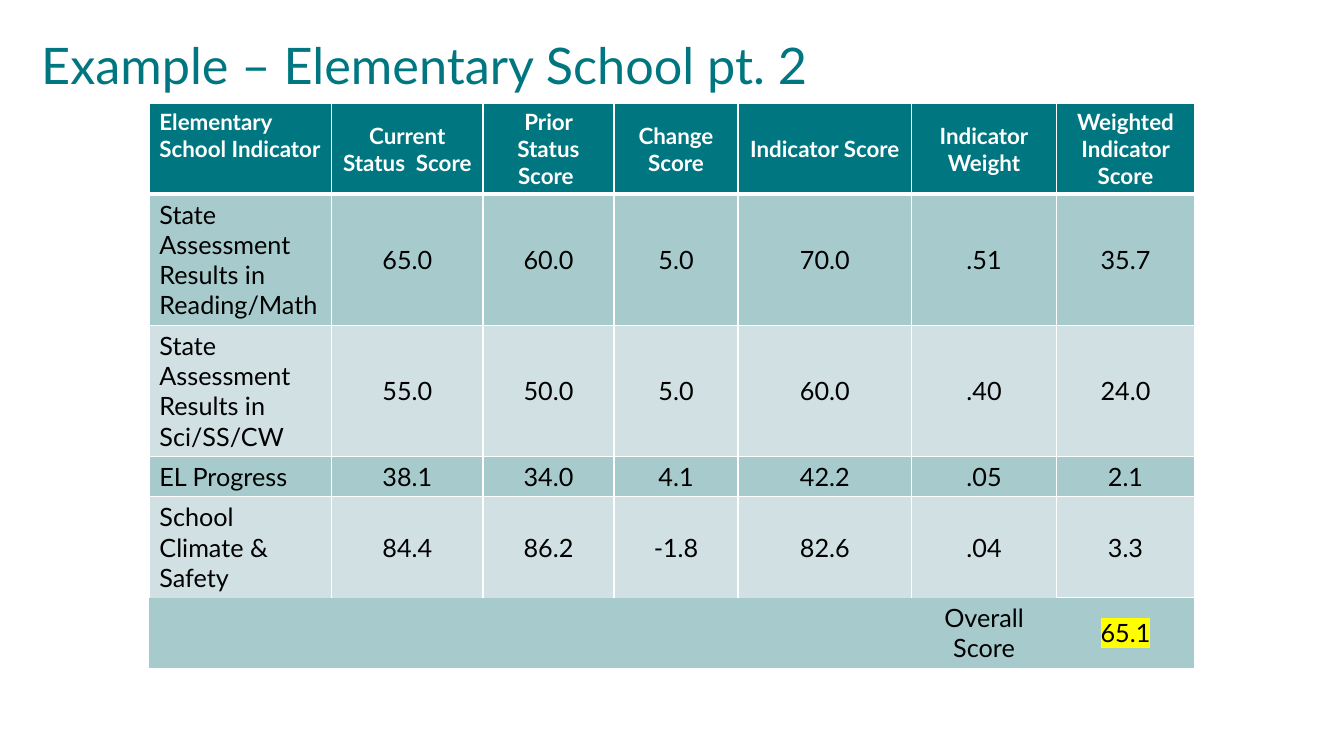
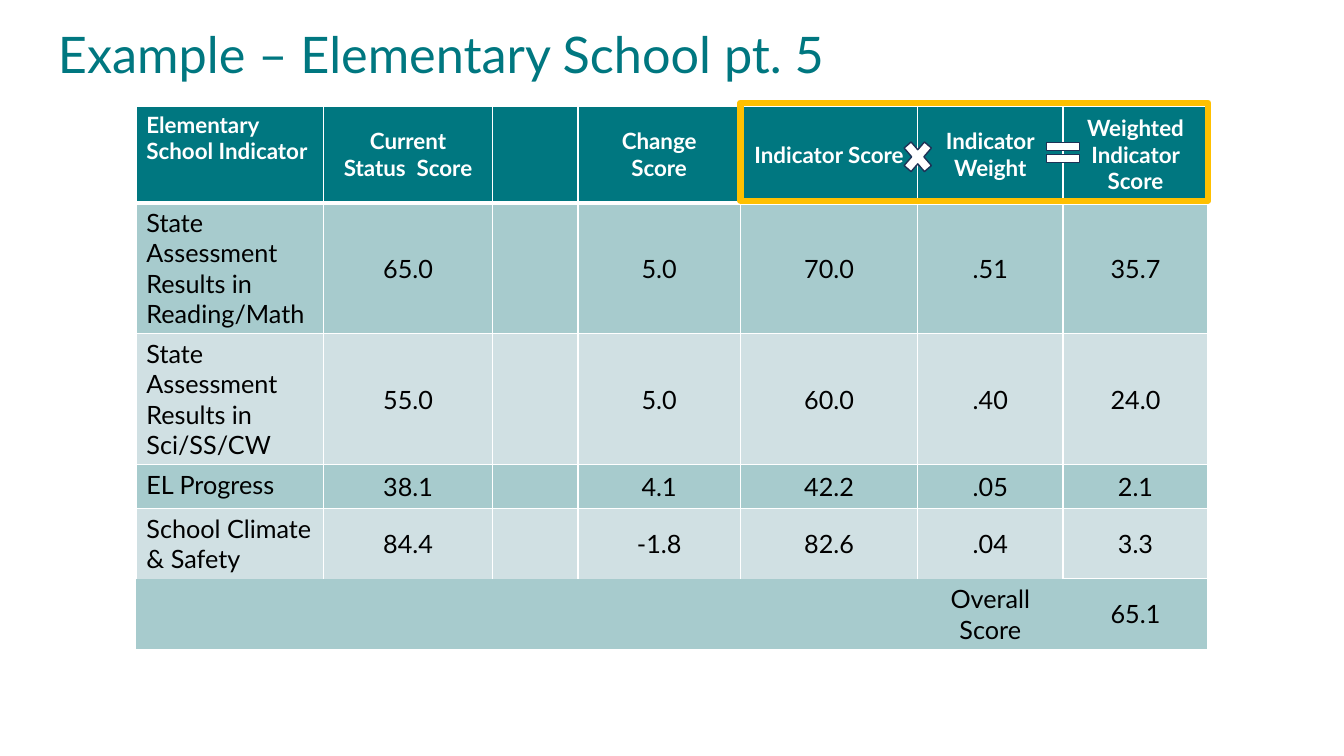
from dataclasses import dataclass
from itertools import accumulate

from lxml.etree import SubElement
from pptx import Presentation
from pptx.dml.color import RGBColor
from pptx.enum.shapes import MSO_SHAPE as Shape
from pptx.enum.text import MSO_ANCHOR as Anchor, MSO_AUTO_SIZE as AutoSize, PP_ALIGN as Align
from pptx.oxml.ns import qn
from pptx.util import Pt


@dataclass(frozen=True)
class Theme:
    font: str = "Lato"
    teal: str = "007780"
    dark_band: str = "A7CBCD"
    light_band: str = "D0E0E3"
    white: str = "FFFFFF"
    black: str = "000000"
    navy: str = "1E3256"
    amber: str = "FFC000"
    yellow: str = "FFFF00"
    title_size: float = 36
    header_size: float = 16
    body_size: float = 18
    thin: float = 1
    thick: float = 3
    frame: float = 4.5


THEME = Theme()

HEADERS = [
    "Elementary School Indicator",
    "Current\nStatus  Score",
    "Prior Status Score ",
    "Change\nScore",
    "Indicator Score",
    "Indicator\nWeight",
    "Weighted Indicator Score",
]
INDICATORS = [
    ["State Assessment Results in Reading/Math", "65.0", "60.0", "5.0", "70.0", ".51", "35.7"],
    ["State Assessment Results in Sci/SS/CW", "55.0", "50.0", "5.0", "60.0", ".40", "24.0"],
    ["EL Progress", "38.1", "34.0", "4.1", "42.2", ".05", "2.1"],
    ["School Climate & Safety", "84.4", "86.2", "-1.8", "82.6", ".04", "3.3"],
]
OVERALL = ["", "", "", "", "", "Overall Score", "65.1"]
ROWS = [HEADERS, *INDICATORS, OVERALL]
PRIOR, LAST_COLUMN, LAST_ROW = 2, len(HEADERS) - 1, len(ROWS) - 1


def color(value):
    return RGBColor.from_string(value)


def write_text(frame, text, *, size, fill, bold=False, align=Align.LEFT, spacing=None, highlight=None):
    for index, line in enumerate(text.split("\n")):
        paragraph = frame.add_paragraph() if index else frame.paragraphs[0]
        paragraph.alignment = align
        if spacing:
            paragraph.line_spacing = spacing
        run = paragraph.add_run()
        run.text = line
        font = run.font
        font.size, font.bold, font.name = Pt(size), bold, THEME.font
        font.color.rgb = color(fill)
        if highlight:
            properties = run._r.get_or_add_rPr()
            mark = SubElement(properties, qn("a:highlight"))
            SubElement(mark, qn("a:srgbClr"), val=highlight)
            properties.find(qn("a:solidFill")).addnext(mark)


def add_titled_slide(presentation, text, left, top):
    slide = presentation.slides.add_slide(presentation.slide_layouts[5])
    title = slide.shapes.title
    title.left, title.top, title.width, title.height = Pt(left), Pt(top), Pt(677), Pt(104)
    frame = title.text_frame
    frame.word_wrap, frame.auto_size = True, AutoSize.NONE
    frame.vertical_anchor = Anchor.MIDDLE
    frame.margin_left = frame.margin_right = Pt(5.4)
    frame.margin_top = frame.margin_bottom = Pt(2.7)
    write_text(frame, text, size=THEME.title_size, fill=THEME.teal, spacing=0.9)
    return slide


def set_borders(cell, **widths):
    properties = cell._tc.get_or_add_tcPr()
    for side in "LRTB":
        width = widths[side]
        line = SubElement(properties, qn(f"a:ln{side}"), w=str(Pt(width)))
        if width:
            fill = SubElement(line, qn("a:solidFill"))
            SubElement(fill, qn("a:srgbClr"), val=THEME.white)
        else:
            SubElement(line, qn("a:noFill"))


def border_widths(row, column):
    widths = dict.fromkeys("LRTB", THEME.thin)
    if row == 0:
        widths["B"] = THEME.thick
    elif row == 1:
        widths["T"] = THEME.thick
    elif row == LAST_ROW:
        if column == LAST_COLUMN:
            widths["L"] = 0
        else:
            widths = dict.fromkeys("LRTB", 0)
    elif row == LAST_ROW - 1 and column < LAST_COLUMN:
        widths["B"] = 0
    return widths


def format_cell(cell, text, row, column, highlight):
    header = row == 0
    set_borders(cell, **border_widths(row, column))
    cell.fill.solid()
    band = THEME.dark_band if row % 2 else THEME.light_band
    cell.fill.fore_color.rgb = color(THEME.teal if header else band)
    top_aligned = column == 0 or text == "Overall Score"
    cell.vertical_anchor = Anchor.TOP if top_aligned else Anchor.MIDDLE
    if text:
        write_text(
            cell.text_frame,
            text,
            size=THEME.header_size if header else THEME.body_size,
            fill=THEME.white if header else THEME.black,
            bold=header,
            align=Align.CENTER if column else Align.LEFT,
            highlight=highlight,
        )


def add_score_table(slide, left, top, widths, heights, *, blank_column=None, total_highlight=None):
    graphic = slide.shapes.add_table(
        len(ROWS), len(HEADERS), Pt(left), Pt(top), Pt(sum(widths)), Pt(sum(heights))
    )
    table = graphic.table
    table.first_row = table.horz_banding = False
    for column, width in zip(table.columns, widths):
        column.width = Pt(width)
    for table_row, height in zip(table.rows, heights):
        table_row.height = Pt(height)
    for row, texts in enumerate(ROWS):
        for column, text in enumerate(texts):
            is_total = (row, column) == (LAST_ROW, LAST_COLUMN)
            format_cell(
                table.cell(row, column),
                "" if column == blank_column else text,
                row,
                column,
                total_highlight if is_total else None,
            )


def add_outlined_shape(slide, kind, left, top, width, height, *, line, weight, fill=None):
    shape = slide.shapes.add_shape(kind, Pt(left), Pt(top), Pt(width), Pt(height))
    shape.shadow.inherit = False
    if fill:
        shape.fill.solid()
        shape.fill.fore_color.rgb = color(fill)
    else:
        shape.fill.background()
    shape.line.color.rgb = color(line)
    shape.line.width = Pt(weight)


def add_operator(slide, kind, center_x, center_y, width, height):
    add_outlined_shape(
        slide, kind, center_x - width / 2, center_y - height / 2, width, height,
        line=THEME.navy, weight=THEME.thin, fill=THEME.white,
    )


def add_scores_slide(presentation):
    slide = add_titled_slide(presentation, "Example – Elementary School pt. 2", 24, -3)
    widths = [130.3, 108, 93.6, 88.6, 124, 103.5, 98.6]
    heights = [64.8, 93.6, 93.6, 28.8, 72, 50.4]
    add_score_table(slide, 106.7, 74, widths, heights, total_highlight=THEME.yellow)


def add_weighting_slide(presentation):
    slide = add_titled_slide(presentation, "Example – Elementary School pt. 5", 36, -11)
    left, top = 97.4, 75.8
    widths = [133.9, 120.4, 61.2, 116, 126.7, 103.7, 103.7]
    heights = [69, 93.6, 93.6, 31, 50.4, 50.4]
    add_score_table(slide, left, top, widths, heights, blank_column=PRIOR)
    edges = list(accumulate(widths, initial=left))
    score_left, weight_left, weighted_left, table_right = edges[4:]
    add_operator(slide, Shape.MATH_EQUAL, weighted_left, 109, 32.4, 24)
    add_outlined_shape(
        slide, Shape.RECTANGLE, score_left, 73.4, table_right - score_left, 70,
        line=THEME.amber, weight=THEME.frame,
    )
    add_operator(slide, Shape.MATH_MULTIPLY, weight_left, 112, 28, 32.4)


def main():
    presentation = Presentation()
    presentation.slide_width, presentation.slide_height = Pt(960), Pt(540)
    add_scores_slide(presentation)
    add_weighting_slide(presentation)
    presentation.save("out.pptx")


if __name__ == "__main__":
    main()
